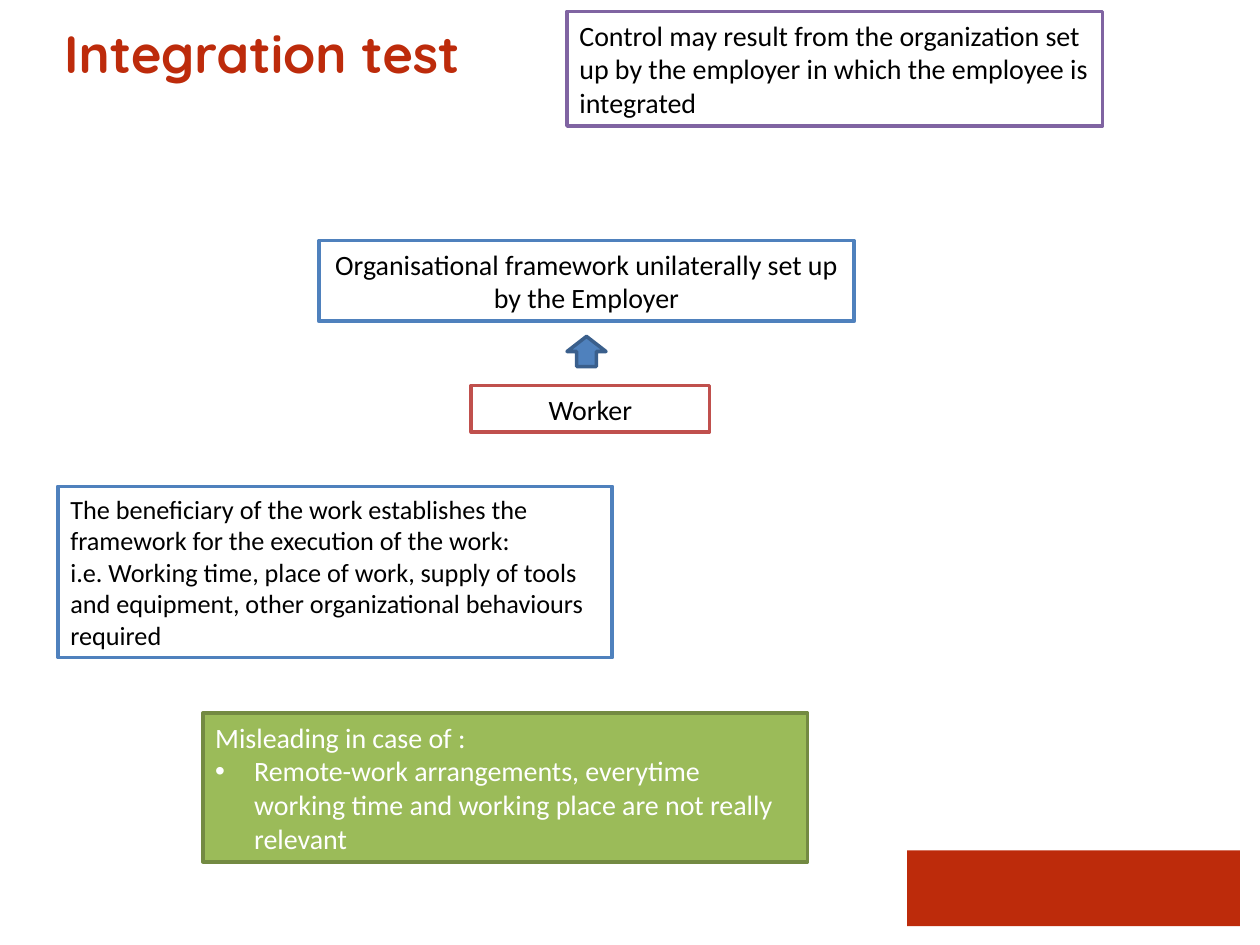
from lxml import etree
from pptx import Presentation
from pptx.dml.color import RGBColor
from pptx.enum.shapes import MSO_SHAPE as Preset
from pptx.enum.text import MSO_ANCHOR as Anchor, PP_ALIGN as Align
from pptx.oxml.ns import qn
from pptx.util import Inches, Pt

WHITE = RGBColor(0xFF, 0xFF, 0xFF)
BLACK = RGBColor(0x00, 0x00, 0x00)
RED = RGBColor(0xBD, 0x2B, 0x0B)
BLUE = RGBColor(0x4F, 0x81, 0xBD)
DARK_BLUE = RGBColor(0x3A, 0x5F, 0x8C)
BRICK = RGBColor(0xC0, 0x50, 0x4D)
PURPLE = RGBColor(0x80, 0x64, 0xA2)
GREEN = RGBColor(0x9B, 0xBB, 0x59)
DARK_GREEN = RGBColor(0x73, 0x8A, 0x42)


def add_block(slide, box, fill, line=None, preset=Preset.RECTANGLE):
    shape = slide.shapes.add_shape(preset, *map(Inches, box))
    shape.shadow.inherit = False
    shape.fill.solid()
    shape.fill.fore_color.rgb = fill
    if line is None:
        shape.line.fill.background()
    else:
        shape.line.color.rgb = line
        shape.line.width = Pt(2)
    return shape


def write_text(shape, lines, size, color, align, font="Calibri", bold=False):
    frame = shape.text_frame
    frame.word_wrap = True
    frame.text = "\n".join(lines)
    for paragraph in frame.paragraphs:
        paragraph.alignment = align
        paragraph.font.name = font
        paragraph.font.size = Pt(size)
        paragraph.font.bold = bold
        paragraph.font.color.rgb = color


def add_bullet(paragraph, indent):
    properties = paragraph._p.get_or_add_pPr()
    properties.set("marL", str(Inches(indent)))
    properties.set("indent", str(-Inches(indent)))
    bullet_font = etree.Element(qn("a:buFont"), typeface="Arial")
    bullet = etree.Element(qn("a:buChar"), char="•")
    properties.insert(0, bullet_font)
    properties.insert(1, bullet)


def add_text_block(slide, box, lines, line, fill=WHITE, color=BLACK,
                   size=16, align=Align.LEFT):
    shape = add_block(slide, box, fill, line)
    shape.text_frame.vertical_anchor = Anchor.MIDDLE
    write_text(shape, lines, size, color, align)
    return shape


def add_title(slide, box, text):
    title = slide.shapes.add_textbox(*map(Inches, box))
    write_text(title, [text], 30, RED, Align.CENTER, "Quicksand", True)


def add_integration_diagram(slide, left, top):
    add_text_block(
        slide, (left, top, 4.25, 0.64),
        ["Organisational framework unilaterally set up by the Employer"],
        BLUE, align=Align.CENTER)
    add_text_block(slide, (left + 1.21, top + 1.15, 1.89, 0.37), ["Worker"],
                   BRICK, align=Align.CENTER)
    add_block(slide, (left + 1.97, top + 0.76, 0.31, 0.24), BLUE, DARK_BLUE,
              Preset.UP_ARROW)


def add_misleading_note(slide, box):
    note = add_text_block(
        slide, box,
        ["Misleading in case of :",
         "Remote-work arrangements, everytime working time and working place "
         "are not really relevant"],
        DARK_GREEN, GREEN, WHITE)
    add_bullet(note.text_frame.paragraphs[1], 0.31)


def main():
    presentation = Presentation()
    presentation.slide_width = Inches(10)
    presentation.slide_height = Inches(7.5)
    slide = presentation.slides.add_slide(presentation.slide_layouts[6])

    add_block(slide, (7.2, 6.75, 2.64, 0.6), RED)
    add_integration_diagram(slide, 2.53, 1.91)
    add_text_block(
        slide, (0.46, 3.86, 4.4, 1.36),
        ["The beneficiary of the work establishes the framework for the "
         "execution of the work:",
         "i.e. Working time, place of work, supply of tools and equipment, "
         "other organizational behaviours required"],
        BLUE, size=15)
    add_misleading_note(slide, (1.61, 5.66, 4.8, 1.18))
    add_text_block(
        slide, (4.5, 0.09, 4.25, 0.91),
        ["Control may result from the organization set up by the employer in "
         "which the employee is integrated"],
        PURPLE)
    add_title(slide, (-1.48, 0.12, 7.12, 1.25), "Integration test")

    presentation.save("out.pptx")


if __name__ == "__main__":
    main()
